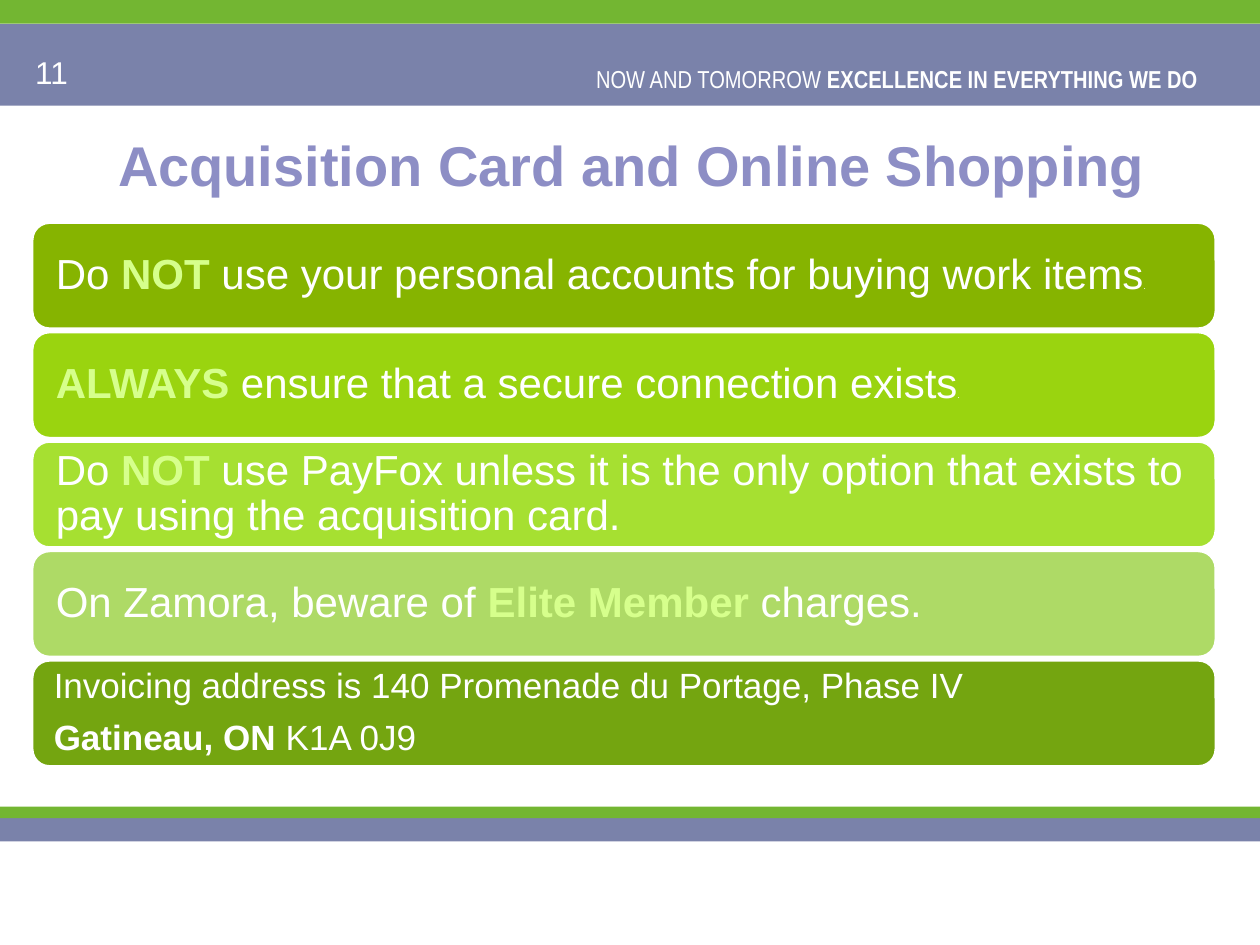
from pptx import Presentation
from pptx.dml.color import RGBColor
from pptx.enum.shapes import MSO_SHAPE as Kind
from pptx.enum.text import MSO_ANCHOR as Anchor, PP_ALIGN as Align
from pptx.util import Cm, Pt

WHITE, LIME, GREEN, BLUE, LILAC = "FFFFFF", "D6FF8C", "73B632", "7A82AA", "8D8EC5"
WIDE = 25.4

# Each row: fill, text size, side inset, paragraphs of (text, bold, colour)
ROWS = [
    ("86B400", 24, 0.38, [[("Do ", False, WHITE), ("NOT", True, LIME),
                           (" use your personal accounts for buying work items", False, WHITE),
                           (".", False, WHITE, 5, "Calibri")]]),
    ("9AD40F", 24, 0.38, [[("ALWAYS ", True, LIME),
                           ("ensure that a secure connection exists", False, WHITE),
                           (".", False, WHITE, 5, "Calibri")]]),
    ("A6E031", 24, 0.38, [[("Do ", False, WHITE), ("NOT ", True, LIME),
                           ("use PayFox unless it is the only option that exists to "
                            "pay using the acquisition card.", False, WHITE)]]),
    ("AEDA66", 24, 0.38, [[("On Zamora, beware of ", False, WHITE),
                           ("Elite Member ", True, LIME), ("charges.", False, WHITE)]]),
    ("74A510", 20, 0.34, [[("Invoicing address is 140 Promenade du Portage, Phase IV",
                            False, WHITE)],
                          [("Gatineau, ON ", True, WHITE), ("K1A 0J9", False, WHITE)]]),
]


def tint(code):
    return RGBColor.from_string(code)


def block(slide, kind, box, fill):
    shape = slide.shapes.add_shape(kind, *map(Cm, box))
    shape.shadow.inherit = False
    shape.fill.solid()
    shape.fill.fore_color.rgb = tint(fill)
    shape.line.fill.background()
    return shape


def write(para, runs, size, face="Arial"):
    para.font.size, para.font.name = Pt(size), face
    for text, bold, color, *own in runs:
        run = para.add_run()
        run.text = text
        run.font.bold = bold
        run.font.color.rgb = tint(color)
        if own:
            run.font.size, run.font.name = Pt(own[0]), own[1]


def label(slide, box, runs, size, face="Arial", align=Align.LEFT):
    frame = slide.shapes.add_textbox(*map(Cm, box)).text_frame
    frame.word_wrap = True
    para = frame.paragraphs[0]
    para.alignment = align
    write(para, runs, size, face)


def header(slide, left, top, width, height):
    strip = 0.48
    block(slide, Kind.RECTANGLE, (left, top + strip, width, height - strip), BLUE)
    block(slide, Kind.RECTANGLE, (left, top, width, strip), GREEN)
    label(slide, (left + 11.68, top + 1.17, 12.83, 0.86),
          [("NOW AND TOMORROW ", False, WHITE),
           ("EXCELLENCE IN EVERYTHING WE DO ", True, WHITE)],
          14, "Arial Narrow", Align.RIGHT)
    label(slide, (left + 0.46, top + 0.94, 5.92, 1.02), [("11", False, WHITE)], 18)


def footer(slide, left, top, width, height):
    strip = height / 3
    block(slide, Kind.RECTANGLE, (left, top + strip, width, height - strip), BLUE)
    block(slide, Kind.RECTANGLE, (left, top, width, strip), GREEN)


def heading(slide, left, top, width, height):
    title = slide.shapes.title
    title.left, title.top, title.width, title.height = map(Cm, (left, top, width, height))
    frame = title.text_frame
    frame.vertical_anchor = Anchor.MIDDLE
    para = frame.paragraphs[0]
    para.alignment = Align.CENTER
    write(para, [("Acquisition Card and Online Shopping", True, LILAC)], 32)


def rules(slide, left, top, width, height):
    gap = 0.05
    tall = (height + gap) / len(ROWS) - gap
    for i, (fill, size, inset, paras) in enumerate(ROWS):
        bar = block(slide, Kind.ROUNDED_RECTANGLE,
                    (left, top + i * (tall + gap), width, tall), fill)
        bar.line.color.rgb = tint(WHITE)
        bar.line.width = Pt(2)
        frame = bar.text_frame
        frame.word_wrap = True
        frame.vertical_anchor = Anchor.MIDDLE
        frame.margin_left = frame.margin_right = Cm(inset)
        frame.margin_top = frame.margin_bottom = Cm(0)
        for n, runs in enumerate(paras):
            para = frame.add_paragraph() if n else frame.paragraphs[0]
            para.alignment = Align.LEFT
            para.line_spacing = 0.9
            para.space_before = Pt(8 if n else 0)
            write(para, runs, size)


def main():
    deck = Presentation()
    deck.slide_width, deck.slide_height = Cm(WIDE), Cm(19.05)
    slide = deck.slides.add_slide(deck.slide_layouts[5])
    header(slide, 0, 0, WIDE, 2.13)
    heading(slide, 0.64, 2.13, 24.2, 2.36)
    rules(slide, 0.64, 4.48, 23.88, 10.98)
    footer(slide, 0, 16.26, WIDE, 0.7)
    deck.save("out.pptx")


if __name__ == "__main__":
    main()
